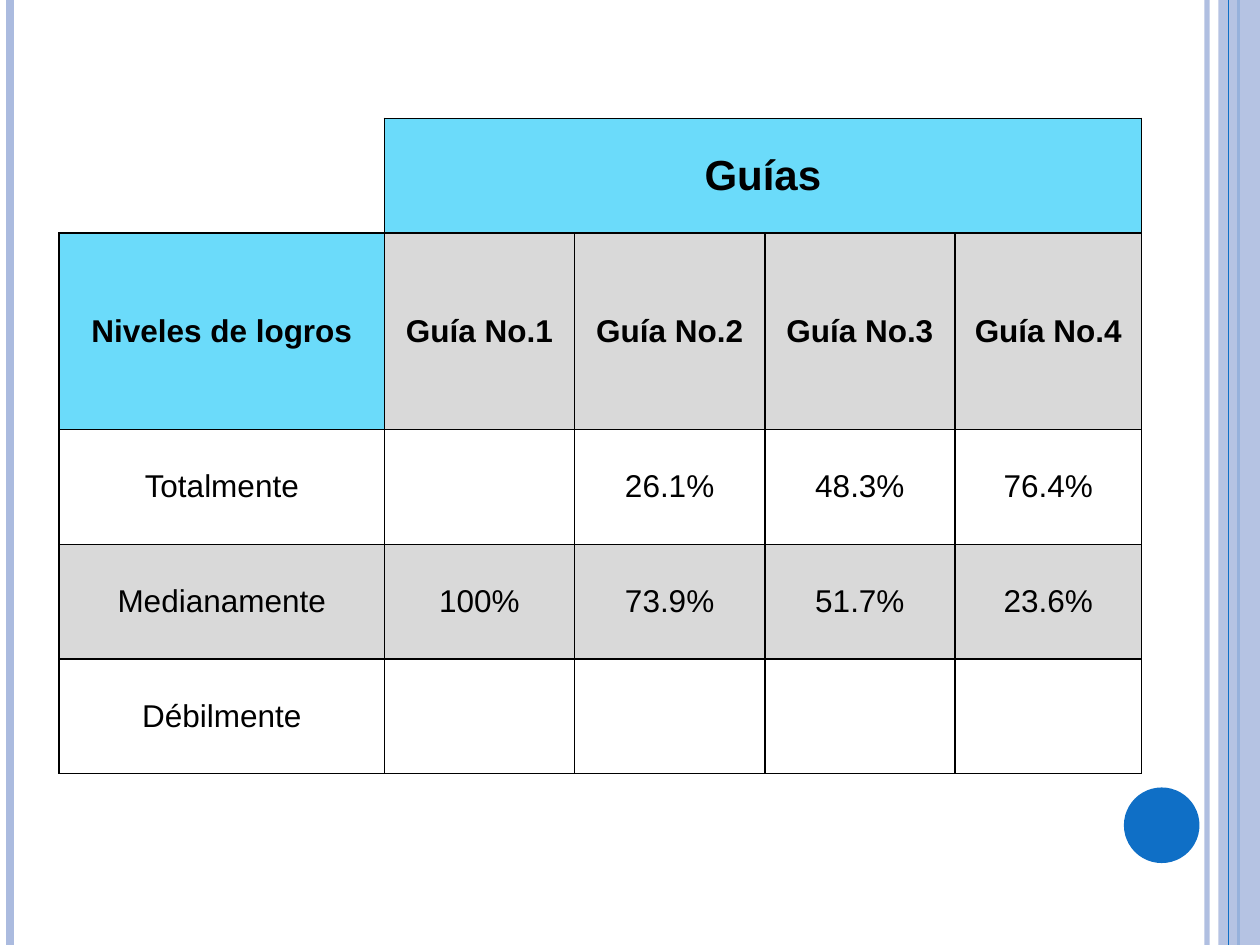
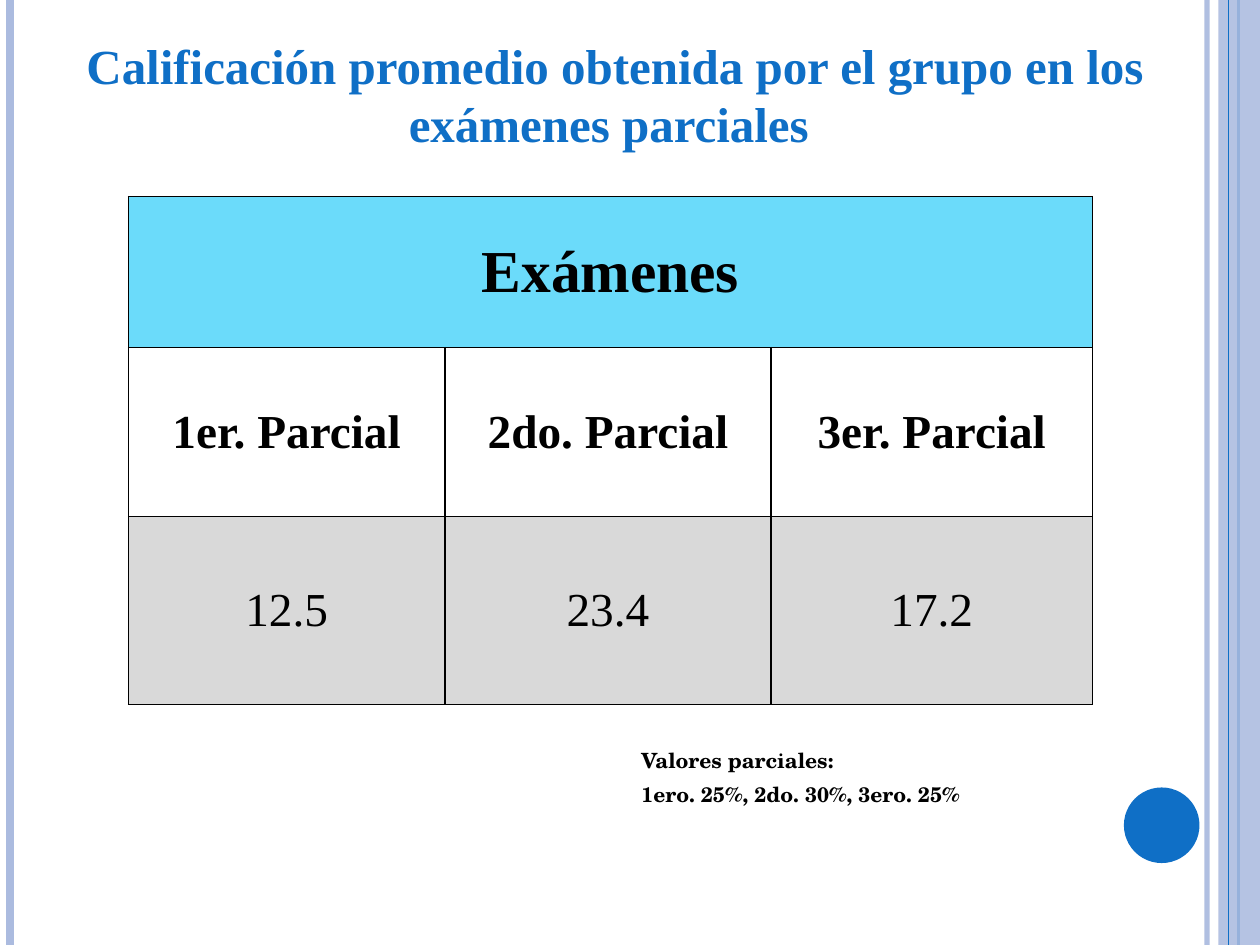
from lxml import etree
from pptx import Presentation
from pptx.dml.color import RGBColor
from pptx.enum.shapes import MSO_CONNECTOR, MSO_SHAPE
from pptx.enum.text import MSO_ANCHOR, PP_ALIGN
from pptx.oxml.ns import qn
from pptx.util import Inches, Pt

LINE = MSO_CONNECTOR.STRAIGHT
RECT, OVAL = MSO_SHAPE.RECTANGLE, MSO_SHAPE.OVAL
MIDDLE = MSO_ANCHOR.MIDDLE
LEFT, CENTER = PP_ALIGN.LEFT, PP_ALIGN.CENTER

# The slide is a grid of 100 columns by 75 rows.
COLS, ROWS = 100, 75
UNIT = Inches(10) // COLS

BLUE, PALE_BLUE = "0F6FC6", "ABBBDF"
CYAN, GRAY, WHITE, BLACK = "6BDBFA", "D9D9D9", "FFFFFF", "000000"
SANS, SERIF, NOTE_FONT = "Arial", "Times New Roman", "TeX Gyre Schola"
ALL_SIDES = "LRTB"


def rgb(color):
    return RGBColor.from_string(color)


def grid(*lengths):
    return [round(length * UNIT) for length in lengths]


def set_alpha(shape, percent):
    """Make the solid colour of a shape or line partly transparent."""
    color = next(shape._element.spPr.iter(qn("a:srgbClr")))
    etree.SubElement(color, qn("a:alpha"), val=str(percent * 1000))


def add_rule(s, col, color, width, alpha=100):
    rule = s.shapes.add_connector(LINE, *grid(col, 0, col, ROWS))
    rule.line.color.rgb = rgb(color)
    rule.line.width = Pt(width)
    if alpha < 100:
        set_alpha(rule, alpha)
    etree.SubElement(rule._element.spPr, qn("a:effectLst"))


def add_block(s, kind, box, color, alpha=100):
    sp = s.shapes.add_shape(kind, *grid(*box))
    sp.shadow.inherit = False
    sp.fill.solid()
    sp.fill.fore_color.rgb = rgb(color)
    sp.line.fill.background()
    if alpha < 100:
        set_alpha(sp, alpha)


def add_slide(prs):
    """Add a blank slide with the shared side bands and disc."""
    s = prs.slides.add_slide(prs.slide_layouts[6])
    add_rule(s, 95.8, PALE_BLUE, 3, alpha=93)
    add_rule(s, 0.8, PALE_BLUE, 4.5)
    add_rule(s, 98.3, BLUE, 1.5)
    add_block(s, RECT, (96.7, 0, 3.3, ROWS), PALE_BLUE, alpha=87)
    add_rule(s, 97.5, BLUE, 0.75)
    add_block(s, OVAL, (89.2, 62.5, 6, 6), BLUE)
    return s


def style_text(p, font, size, color=BLACK, bold=False, align=CENTER):
    p.alignment = align
    p.font.name = font
    p.font.size = Pt(size)
    p.font.color.rgb = rgb(color)
    p.font.bold = bold


def add_title(s, text):
    tf = s.shapes.add_textbox(*grid(3.9, 2.3, 89.8, 10.4)).text_frame
    tf.word_wrap = True
    p = tf.paragraphs[0]
    p.text = text
    style_text(p, SERIF, 28, BLUE, bold=True)


def set_borders(cell, sides):
    """Draw the named sides in black and hide the others."""
    tc_pr = cell._tc.get_or_add_tcPr()
    for i, side in enumerate(ALL_SIDES):
        ln = etree.Element(qn(f"a:ln{side}"), w=str(Pt(1)))
        if side in sides:
            fill = etree.SubElement(ln, qn("a:solidFill"))
            etree.SubElement(fill, qn("a:srgbClr"), val=BLACK)
        else:
            etree.SubElement(ln, qn("a:noFill"))
        tc_pr.insert(i, ln)


def style_cell(cell, fill=None, sides=ALL_SIDES):
    cell.vertical_anchor = MIDDLE
    if fill:
        cell.fill.solid()
        cell.fill.fore_color.rgb = rgb(fill)
    else:
        cell.fill.background()
    set_borders(cell, sides)


def add_table(s, left, top, widths, heights):
    box = grid(left, top, sum(widths), sum(heights))
    table = s.shapes.add_table(len(heights), len(widths), *box).table
    table.first_row = table.horz_banding = False
    for column, width in zip(table.columns, grid(*widths)):
        column.width = width
    for row, height in zip(table.rows, grid(*heights)):
        row.height = height
    return table


def fill_row(table, row, texts, fills, font, size, bold=False):
    for cell, text, fill in zip(table.rows[row].cells, texts, fills):
        cell.text = text
        style_text(cell.text_frame.paragraphs[0], font, size, bold=bold)
        style_cell(cell, fill)


def merge_row(table, row, first=0, fill=None, sides=ALL_SIDES):
    """Merge a row from column first to its end; return the merged cell."""
    last = len(table.columns) - 1
    for col in range(first, last + 1):
        style_cell(table.cell(row, col), fill, sides)
    cell = table.cell(row, first)
    cell.merge(table.cell(row, last))
    return cell


def add_heading(cell, text, font, size):
    cell.text = text
    style_text(cell.text_frame.paragraphs[0], font, size, bold=True)


def add_note(cell, lines):
    cell.text = "\n".join(lines)
    cell.margin_bottom = grid(3.4)[0]
    for p in cell.text_frame.paragraphs:
        style_text(p, NOTE_FONT, 12, bold=True, align=LEFT)
        p.line_spacing = Pt(19)
        p._p.get_or_add_pPr().set("marL", str(grid(39.7)[0]))


def add_guides_slide(prs):
    s = add_slide(prs)
    table = add_table(s, 4.7, 9.4, [25.8, 15.1, 15.1, 15.1, 14.8],
                      [9.1, 15.6] + [9.1] * 4)
    style_cell(table.cell(0, 0), sides="RB")
    add_heading(merge_row(table, 0, first=1, fill=CYAN), "Guías", SANS, 24)
    names = ["Niveles de logros"] + [f"Guía No.{n}" for n in range(1, 5)]
    fill_row(table, 1, names, [CYAN] + [GRAY] * 4, SANS, 18, bold=True)
    levels = [
        (["Totalmente", "", "26.1%", "48.3%", "76.4%"], None),
        (["Medianamente", "100%", "73.9%", "51.7%", "23.6%"], GRAY),
        (["Débilmente", "", "", "", ""], None),
    ]
    for row, (texts, fill) in enumerate(levels, start=2):
        fill_row(table, row, texts, [fill] * 5, SANS, 18)
    merge_row(table, 5, sides="T")


def add_exams_slide(prs):
    s = add_slide(prs)
    table = add_table(s, 10.2, 15.6, [25.1, 25.9, 25.5],
                      [12, 13.4, 14.9, 14.4])
    add_heading(merge_row(table, 0, fill=CYAN), "Exámenes", SERIF, 34)
    fill_row(table, 1, ["1er. Parcial", "2do. Parcial", "3er. Parcial"],
             [WHITE, None, None], SERIF, 27, bold=True)
    fill_row(table, 2, ["12.5", "23.4", "17.2"], [GRAY] * 3, SERIF, 27)
    add_note(merge_row(table, 3, sides="T"),
             ["Valores parciales:", "1ero. 25%, 2do. 30%, 3ero. 25%"])
    add_title(s, "Calificación promedio obtenida por el grupo en los "
                 "exámenes parciales ")


def main():
    prs = Presentation()
    prs.slide_width, prs.slide_height = grid(COLS, ROWS)
    add_guides_slide(prs)
    add_exams_slide(prs)
    prs.save("out.pptx")


if __name__ == "__main__":
    main()
